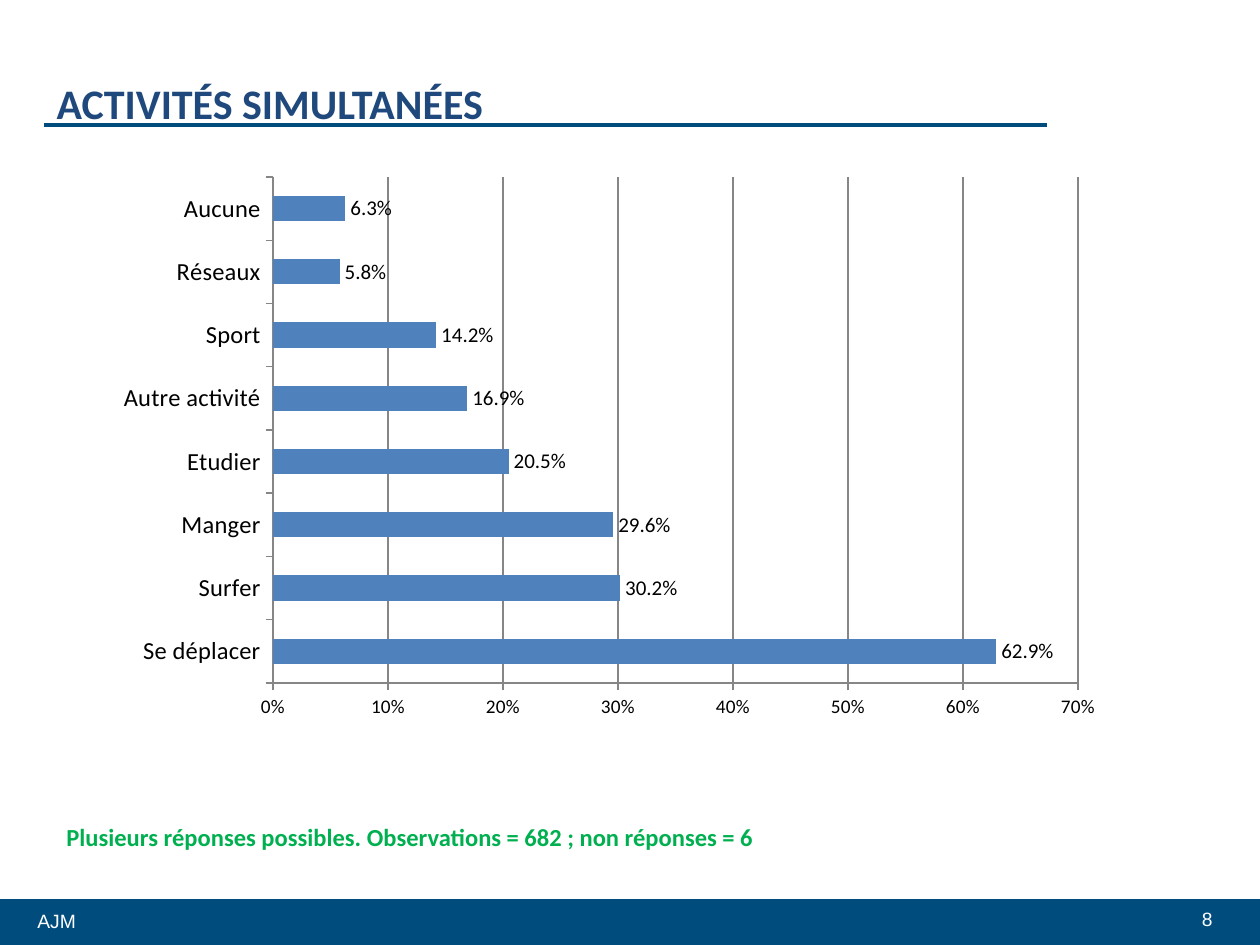
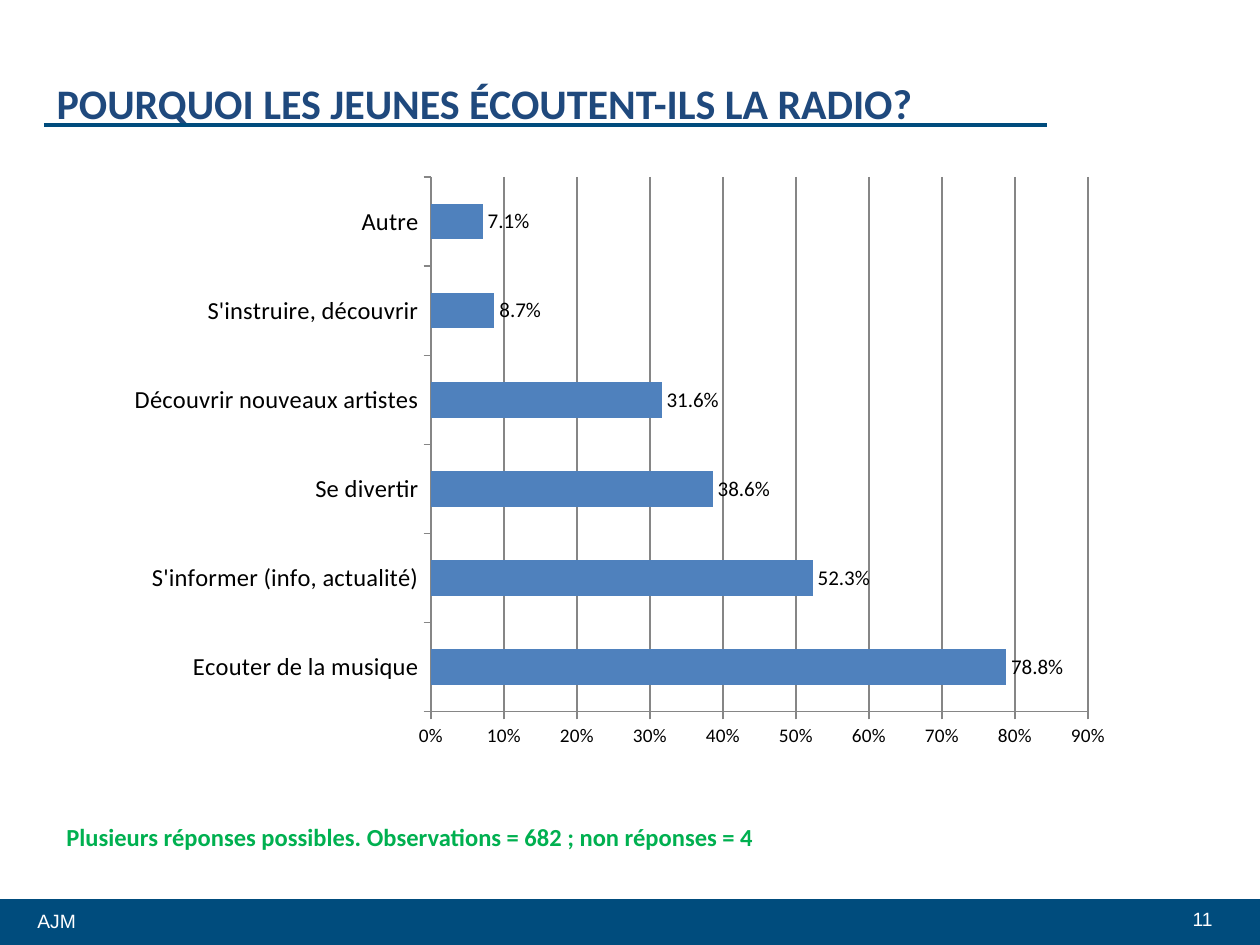
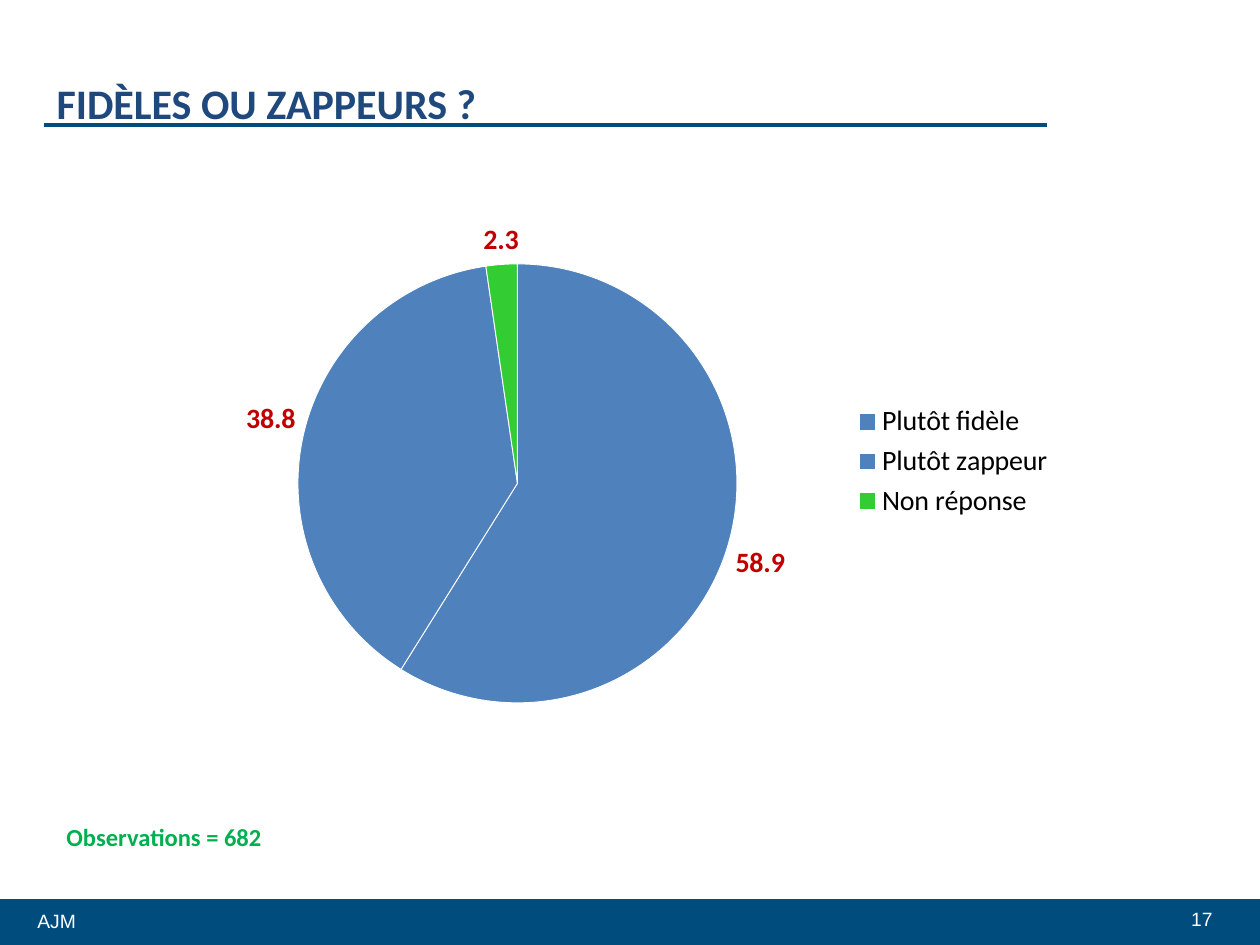
import lxml.etree
import pptx
import pptx.chart.data
import pptx.dml.color
import pptx.enum.chart
import pptx.enum.shapes
import pptx.enum.text
import pptx.oxml.ns
import pptx.util

PX_PER_INCH = 126
SLIDE_WIDTH, SLIDE_HEIGHT = 1260, 945
NAVY, TITLE_BLUE, GREEN, BLACK, WHITE = "004C7D", "1F497D", "00B050", "000000", "FFFFFF"
BAR_BLUE, PIE_GREEN, LABEL_RED, GRID_GREY = "4F81BD", "33CC33", "C00000", "868686"

CHART_TYPE = pptx.enum.chart.XL_CHART_TYPE
ALIGN = pptx.enum.text.PP_ALIGN
ANCHOR = pptx.enum.text.MSO_ANCHOR


def px(*lengths):
    return [pptx.util.Emu(round(length * 914400 / PX_PER_INCH)) for length in lengths]


def rgb(color):
    return pptx.dml.color.RGBColor.from_string(color)


def set_values(target, values):
    for name, value in values.items():
        setattr(target, name, value)


def set_font(font, size, color=BLACK, name="Calibri", bold=False):
    set_values(font, {"size": pptx.util.Pt(size), "name": name, "bold": bold})
    font.color.rgb = rgb(color)


def set_line(line, color, width):
    line.color.rgb = rgb(color)
    line.width = pptx.util.Pt(width)


def set_plot_place(chart, frame, plot):
    """Fix the inner plot area; frame and plot are left, top, width, height on the slide."""
    qn = pptx.oxml.ns.qn
    area = chart.element.find(".//" + qn("c:plotArea"))
    for old in area.findall(qn("c:layout")):
        area.remove(old)
    layout = lxml.etree.Element(qn("c:layout"))
    area.insert(0, layout)
    manual = lxml.etree.SubElement(layout, qn("c:manualLayout"))
    settings = {
        "layoutTarget": "inner", "xMode": "edge", "yMode": "edge",
        "x": (plot[0] - frame[0]) / frame[2],
        "y": (plot[1] - frame[1]) / frame[3],
        "w": plot[2] / frame[2],
        "h": plot[3] / frame[3],
    }
    for tag, value in settings.items():
        lxml.etree.SubElement(manual, qn("c:" + tag)).set("val", str(value))


class SurveyDeck:
    def __init__(self):
        self.deck = pptx.Presentation()
        self.deck.slide_width, self.deck.slide_height = px(SLIDE_WIDTH, SLIDE_HEIGHT)
        self.page = None

    def new_page(self, title, number, note):
        self.page = self.deck.slides.add_slide(self.deck.slide_layouts[5])
        self.band(0, 899, SLIDE_WIDTH, 46)
        self.text("AJM", (25, 903, 397, 37), size=11, color=WHITE, name="Arial")
        self.text(str(number), (828, 901, 397, 37), ALIGN.RIGHT,
                  size=11, color=WHITE, name="Arial")
        self.rule(44, 125, 1047)
        self.title(title)
        self.text(note, (54, 816, 718, 43), wrap=False, size=14, color=GREEN, bold=True)

    def band(self, *place):
        shape = self.page.shapes.add_shape(
            pptx.enum.shapes.MSO_SHAPE.RECTANGLE, *px(*place))
        shape.shadow.inherit = False
        shape.fill.solid()
        shape.fill.fore_color.rgb = rgb(NAVY)
        shape.line.fill.background()

    def rule(self, left, top, right):
        line = self.page.shapes.add_connector(
            pptx.enum.shapes.MSO_CONNECTOR.STRAIGHT, *px(left, top, right, top))
        set_line(line.line, NAVY, 2)
        properties = line.element.find(pptx.oxml.ns.qn("p:spPr"))
        lxml.etree.SubElement(properties, pptx.oxml.ns.qn("a:effectLst"))

    def fill_text(self, box, words, align, anchor, wrap, font):
        frame = box.text_frame
        set_values(frame, {"word_wrap": wrap, "vertical_anchor": anchor,
                           "auto_size": pptx.enum.text.MSO_AUTO_SIZE.NONE})
        para = frame.paragraphs[0]
        para.alignment = align
        span = para.add_run()
        span.text = words
        set_font(span.font, **font)
        return frame

    def text(self, words, place, align=ALIGN.LEFT, wrap=True, **font):
        box = self.page.shapes.add_textbox(*px(*place))
        self.fill_text(box, words, align, ANCHOR.TOP, wrap, font)

    def title(self, words):
        box = self.page.shapes.title
        place = dict(zip(("left", "top", "width", "height"), px(44, 81, 1022, 44)))
        set_values(box, place)
        frame = self.fill_text(box, words, ALIGN.LEFT, ANCHOR.MIDDLE, True,
                               {"size": 24, "color": TITLE_BLUE, "bold": True})
        set_values(frame, {"margin_top": 0, "margin_bottom": 0})

    def chart(self, kind, values, place, plot, number_format, label_font):
        data = pptx.chart.data.CategoryChartData(number_format=number_format)
        data.categories = list(values)
        data.add_series("Series 1", list(values.values()))
        chart = self.page.shapes.add_chart(kind, *px(*place), data).chart
        set_font(chart.font, 10)
        set_values(chart, {"has_title": False, "has_legend": False})
        set_plot_place(chart, place, plot)
        chart.plots[0].has_data_labels = True
        labels = chart.plots[0].data_labels
        set_values(labels, {
            "show_value": True, "show_percentage": False,
            "number_format": number_format, "number_format_is_linked": False,
            "position": pptx.enum.chart.XL_LABEL_POSITION.OUTSIDE_END,
        })
        set_font(labels.font, **label_font)
        return chart

    def bar_chart(self, values, place, plot, maximum):
        chart = self.chart(CHART_TYPE.BAR_CLUSTERED, values, place, plot,
                           "0.0%", {"size": 12})
        set_values(chart.plots[0], {"gap_width": 150, "vary_by_categories": False})
        fill = chart.series[0].format.fill
        fill.solid()
        fill.fore_color.rgb = rgb(BAR_BLUE)
        tick = pptx.enum.chart.XL_TICK_MARK
        for axis, size in ((chart.category_axis, 14), (chart.value_axis, 11)):
            set_values(axis, {"major_tick_mark": tick.OUTSIDE, "minor_tick_mark": tick.NONE})
            set_font(axis.tick_labels.font, size)
            set_line(axis.format.line, GRID_GREY, 0.75)
        axis = chart.value_axis
        set_values(axis, {"minimum_scale": 0, "maximum_scale": maximum,
                          "major_unit": 0.1, "has_major_gridlines": True})
        set_line(axis.major_gridlines.format.line, GRID_GREY, 0.75)
        set_values(axis.tick_labels, {"number_format": "0%", "number_format_is_linked": False})

    def pie_chart(self, values, colors, place, plot):
        chart = self.chart(CHART_TYPE.PIE, values, place, plot, "0.0",
                           {"size": 16, "color": LABEL_RED, "bold": True})
        chart.has_legend = True
        set_values(chart.legend, {"include_in_layout": False,
                                  "position": pptx.enum.chart.XL_LEGEND_POSITION.RIGHT})
        set_font(chart.legend.font, 16)
        for index, color in enumerate(colors):
            slice_format = chart.series[0].points[index].format
            slice_format.fill.solid()
            slice_format.fill.fore_color.rgb = rgb(color)
            set_line(slice_format.line, WHITE, 0.5)


def main():
    survey = SurveyDeck()
    survey.new_page("ACTIVITÉS SIMULTANÉES", 8,
                    "Plusieurs réponses possibles. Observations = 682 ; non réponses = 6")
    survey.bar_chart(
        {"Se déplacer": 0.629, "Surfer": 0.302, "Manger": 0.296, "Etudier": 0.205,
         "Autre activité": 0.169, "Sport": 0.142, "Réseaux": 0.058, "Aucune": 0.063},
        place=(105, 165, 1012, 566), plot=(273, 177, 805, 506), maximum=0.7)

    survey.new_page("POURQUOI LES JEUNES ÉCOUTENT-ILS LA RADIO?", 11,
                    "Plusieurs réponses possibles. Observations = 682 ; non réponses = 4")
    survey.bar_chart(
        {"Ecouter de la musique": 0.788, "S'informer (info, actualité)": 0.523,
         "Se divertir": 0.386, "Découvrir nouveaux artistes": 0.316,
         "S'instruire, découvrir": 0.087, "Autre": 0.071},
        place=(115, 165, 1012, 595), plot=(431, 177, 657, 535), maximum=0.9)

    survey.new_page("FIDÈLES OU ZAPPEURS ?", 17, "Observations = 682")
    survey.pie_chart(
        {"Plutôt fidèle": 58.9, "Plutôt zappeur": 38.8, "Non réponse": 2.3},
        (BAR_BLUE, BAR_BLUE, PIE_GREEN),
        place=(184, 204, 883, 515), plot=(298, 264, 439, 439))

    survey.deck.save("out.pptx")


if __name__ == "__main__":
    main()
